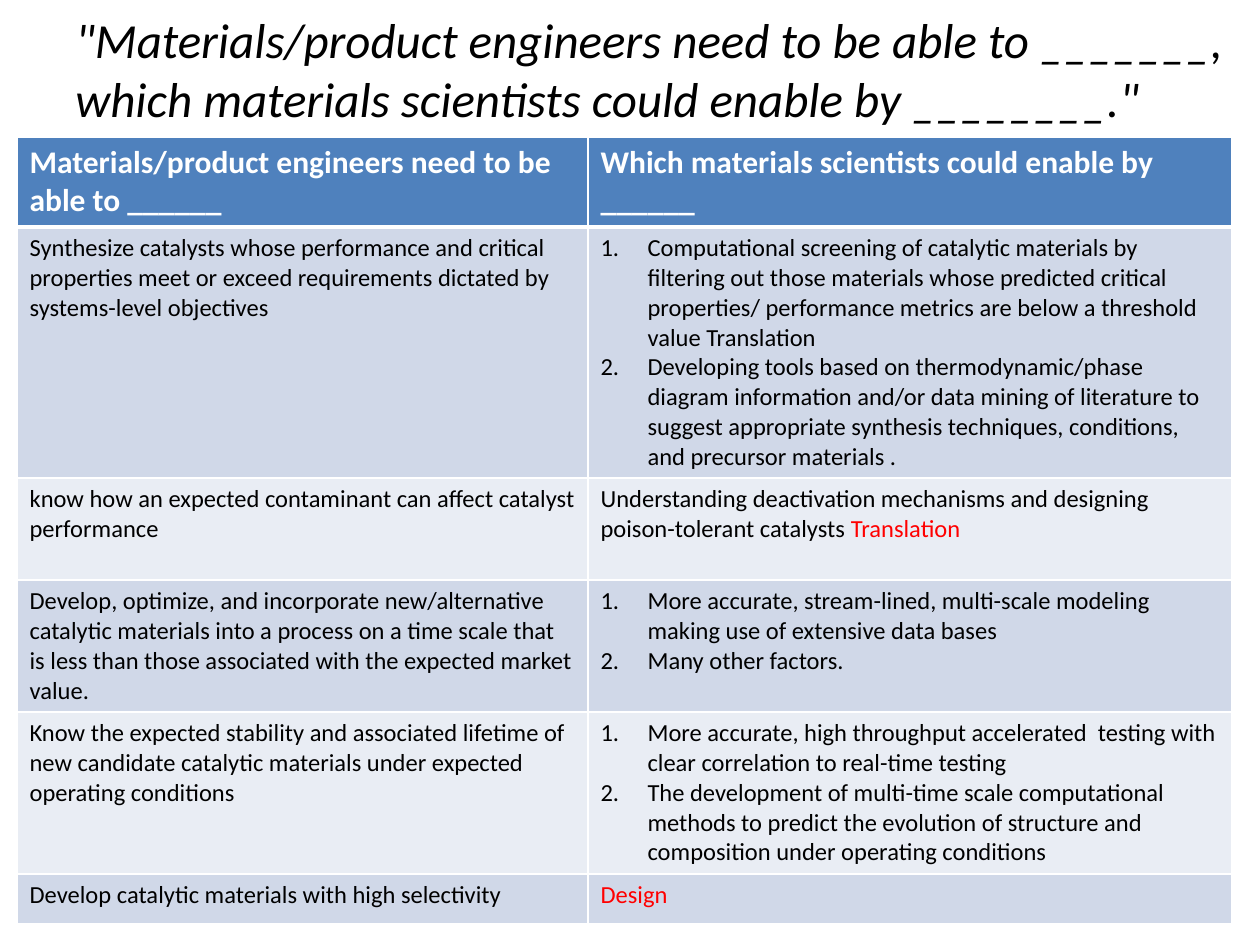
from lxml.etree import SubElement
from pptx import Presentation
from pptx.dml.color import RGBColor
from pptx.oxml.ns import qn
from pptx.util import Emu, Pt

TITLE = ('"Materials/product engineers need to be able to _______, '
         'which materials scientists could enable by ________."')
HEADER = ["Materials/product engineers need to be able to ______",
          "Which materials scientists could enable by ______"]
ROWS = [
    ("Synthesize catalysts whose performance and critical properties meet or exceed "
     "requirements dictated by systems-level objectives",
     ["Computational screening of catalytic materials by filtering out those materials whose "
      "predicted critical properties/ performance metrics are below a threshold value Translation",
      "Developing tools based on thermodynamic/phase diagram information and/or data mining of "
      "literature to suggest appropriate synthesis techniques, conditions, and precursor materials ."]),
    ("know how an expected contaminant can affect catalyst performance",
     ("Understanding deactivation mechanisms and designing poison-tolerant catalysts ",
      "Translation")),
    ("Develop, optimize, and incorporate new/alternative catalytic materials into a process on a "
     "time scale that is less than those associated with the expected market value.",
     ["More accurate, stream-lined, multi-scale modeling making use of extensive data bases",
      "Many other factors."]),
    ("Know the expected stability and associated lifetime of new candidate catalytic materials "
     "under expected operating conditions",
     ["More accurate, high throughput accelerated  testing with clear correlation to real-time testing",
      "The development of multi-time scale computational methods to predict the evolution of "
      "structure and composition under operating conditions"]),
    ("Develop catalytic materials with high selectivity", ("", "Design")),
]
COL_WIDTHS = [571, 644]
ROW_HEIGHTS = [90, 251, 102, 132, 162, 50]


def px(n):
    return Emu(round(n * 914400 / 126))


def rgb(value):
    return RGBColor.from_string(value)


class Deck:
    """Builds slide elements in one shared style."""

    font = "Calibri"
    ink, white, accent = "000000", "FFFFFF", "FF0000"
    head, bands = "4F81BD", ("D0D8E8", "E9EDF4")
    indent = 47

    def __init__(self, prs):
        self.prs = prs
        self.s = prs.slides.add_slide(prs.slide_layouts[6])

    def style(self, p, size, color, bold=False, italic=False):
        f = p.font
        f.name, f.size, f.bold, f.italic = self.font, Pt(size), bold, italic
        f.color.rgb = rgb(color)

    def text(self, x, y, w, h, words, size):
        tf = self.s.shapes.add_textbox(px(x), px(y), px(w), px(h)).text_frame
        tf.word_wrap = True
        p = tf.paragraphs[0]
        p.text = words
        self.style(p, size, self.ink, italic=True)

    def border(self, cell, bottom):
        tc_pr = cell._tc.get_or_add_tcPr()
        for side, width in zip("LRTB", (1, 1, 1, bottom)):
            ln = SubElement(tc_pr, qn(f"a:ln{side}"), w=str(Pt(width)))
            fill = SubElement(ln, qn("a:solidFill"))
            SubElement(fill, qn("a:srgbClr"), val=self.white)

    def number(self, p):
        p_pr = p._p.get_or_add_pPr()
        p_pr.set("marL", str(px(self.indent)))
        p_pr.set("indent", str(-px(self.indent)))
        bullet = SubElement(p_pr, qn("a:buAutoNum"), type="arabicPeriod")
        p_pr.insert(0, bullet)

    def cell(self, cell, content, fill, size=14, color=ink, bold=False, bottom=1):
        self.border(cell, bottom)
        cell.fill.solid()
        cell.fill.fore_color.rgb = rgb(fill)
        tf = cell.text_frame
        numbered = isinstance(content, list)
        for i, item in enumerate(content if numbered else [content]):
            p = tf.add_paragraph() if i else tf.paragraphs[0]
            self.style(p, size, color, bold)
            if numbered:
                self.number(p)
            plain, marked = item if isinstance(item, tuple) else (item, "")
            for words, tint in ((plain, color), (marked, self.accent)):
                if words:
                    r = p.add_run()
                    r.text = words
                    r.font.color.rgb = rgb(tint)

    def table(self, x, y, widths, heights, header, rows):
        table = self.s.shapes.add_table(len(heights), len(widths), px(x), px(y),
                                        px(sum(widths)), px(sum(heights))).table
        for col, width in zip(table.columns, widths):
            col.width = px(width)
        for row, height in zip(table.rows, heights):
            row.height = px(height)
        for c, words in enumerate(header):
            self.cell(table.cell(0, c), words, self.head, 18, self.white, True, 3)
        for r, row in enumerate(rows):
            for c, content in enumerate(row):
                self.cell(table.cell(r + 1, c), content, self.bands[r % 2])


def main():
    prs = Presentation()
    prs.slide_width, prs.slide_height = px(1260), px(945)
    deck = Deck(prs)
    deck.table(17, 137, COL_WIDTHS, ROW_HEIGHTS, HEADER, ROWS)
    deck.text(63, 3, 1197, 131, TITLE, 28)
    prs.save("out.pptx")


if __name__ == "__main__":
    main()
